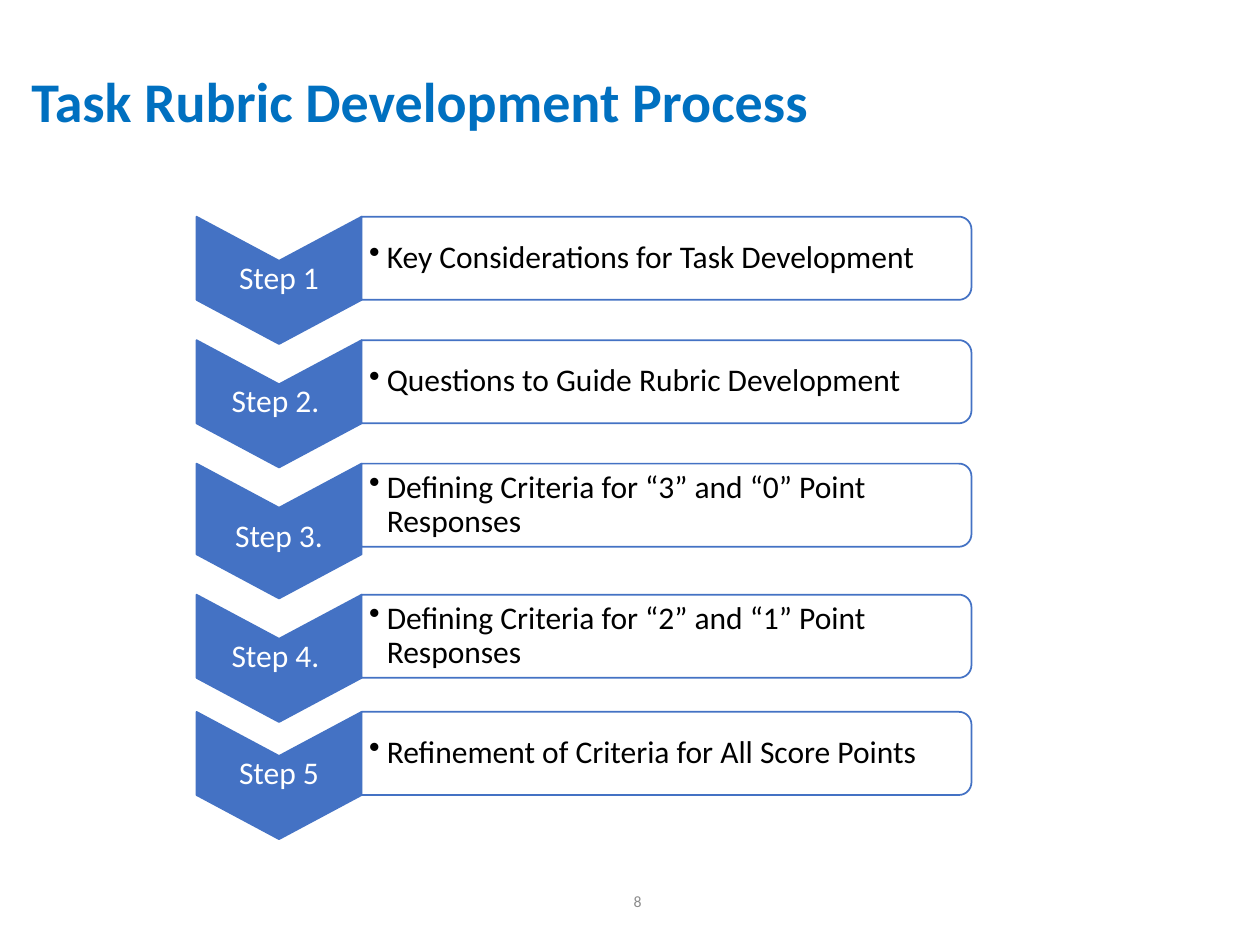
from math import cos, pi, sin

from lxml.etree import SubElement
from pptx import Presentation
from pptx.dml.color import RGBColor
from pptx.enum.text import MSO_ANCHOR as ANCHOR, PP_ALIGN as ALIGN
from pptx.oxml.ns import qn
from pptx.util import Inches, Pt

COLORS = {"title": "0070C0", "accent": "4472C4", "white": "FFFFFF",
          "text": "000000", "number": "8C8C8C"}
FONT = "Calibri"

CHEVRON_LEFT, CHEVRON_WIDTH, CHEVRON_HEIGHT, NOTCH = 1.56, 1.31, 1.01, 0.35
BAR_WIDTH, BAR_HEIGHT, CORNER = 4.84, 0.66, 0.1

# Label, description, top of the row, extra chevron height, label inset
STEPS = [
    ("Step 1", "Key Considerations for Task Development", 1.72, 0, 0.36),
    ("Step 2. ", "Questions to Guide Rubric Development", 2.7, 0, 0.36),
    ("Step 3.", "Defining Criteria for “3” and “0” Point Responses", 3.68, 0.06, 0.45),
    ("Step 4. ", "Defining Criteria for “2” and “1” Point Responses", 4.72, 0, 0.36),
    ("Step 5", "Refinement of Criteria for All Score Points", 5.65, 0, 0.36),
]


def rgb(name):
    return RGBColor.from_string(COLORS[name])


def write(shape, text, size, color, align=ALIGN.LEFT, anchor=ANCHOR.MIDDLE,
          insets=(0.1, 0.05, 0.1, 0.05), spacing=0.9, bold=False, bullet=False):
    frame = shape.text_frame
    frame.word_wrap = True
    frame.vertical_anchor = anchor
    (frame.margin_left, frame.margin_top,
     frame.margin_right, frame.margin_bottom) = map(Inches, insets)
    frame.text = text
    paragraph = frame.paragraphs[0]
    paragraph.alignment = align
    paragraph.line_spacing = spacing
    if bullet:
        props = paragraph._p.get_or_add_pPr()
        props.set("marL", str(Inches(0.14)))
        props.set("indent", str(-Inches(0.14)))
        SubElement(props, qn("a:buChar")).set("char", "•")
    font = paragraph.runs[0].font
    font.name, font.size, font.bold = FONT, Pt(size), bold
    font.color.rgb = rgb(color)


def add_outline(slide, points, fill):
    corners = [(Inches(x), Inches(y)) for x, y in points]
    builder = slide.shapes.build_freeform(*corners[0])
    builder.add_line_segments(corners[1:], close=True)
    shape = builder.convert_to_shape()
    shape.shadow.inherit = False
    shape.fill.solid()
    shape.fill.fore_color.rgb = rgb(fill)
    shape.line.color.rgb = rgb("accent")
    shape.line.width = Pt(1)
    return shape


def add_chevron(slide, left, top, width, height, label, inset):
    right, middle, bottom = left + width, left + width / 2, top + height
    points = [(left, top), (middle, top + NOTCH), (right, top),
              (right, bottom - NOTCH), (middle, bottom), (left, bottom - NOTCH)]
    write(add_outline(slide, points, "accent"), label, 18, "white",
          ALIGN.CENTER, ANCHOR.TOP, (0, inset, 0, 0.36))


def add_bar(slide, left, top, width, height, description):
    right, bottom = left + width, top + height

    # Rounded corners on the right side only
    def arc(center_y, start):
        angles = [start + pi / 2 * i / 8 for i in range(9)]
        return [(right - CORNER + CORNER * cos(a), center_y + CORNER * sin(a))
                for a in angles]

    points = [(left, top), *arc(top + CORNER, -pi / 2),
              *arc(bottom - CORNER, 0), (left, bottom)]
    bar = add_outline(slide, points, "white")
    fill_color = bar._element.spPr.find(qn("a:solidFill"))[0]
    SubElement(fill_color, qn("a:alpha")).set("val", "90000")
    write(bar, description, 18, "text", insets=(0.06, 0.04, 0.04, 0.04), bullet=True)


def add_step(slide, left, top, label, description, extra, inset):
    add_chevron(slide, left, top, CHEVRON_WIDTH, CHEVRON_HEIGHT + extra, label, inset)
    add_bar(slide, left + CHEVRON_WIDTH, top, BAR_WIDTH, BAR_HEIGHT, description)


def add_text(slide, left, top, width, height, text, size, color, **style):
    box = slide.shapes.add_textbox(*map(Inches, (left, top, width, height)))
    write(box, text, size, color, **style)


def main():
    deck = Presentation()
    deck.slide_width, deck.slide_height = Inches(10), Inches(7.5)
    slide = deck.slides.add_slide(deck.slide_layouts[6])

    # Slide number and title
    add_text(slide, 2.94, 6.95, 2.25, 0.4, "8", 9, "number",
             align=ALIGN.RIGHT, spacing=1.0)
    add_text(slide, 0.15, 0.36, 8.6, 0.94, "Task Rubric Development Process",
             32, "title", bold=True)

    # Process steps
    for label, description, top, extra, inset in STEPS:
        add_step(slide, CHEVRON_LEFT, top, label, description, extra, inset)

    deck.save("out.pptx")


if __name__ == "__main__":
    main()
